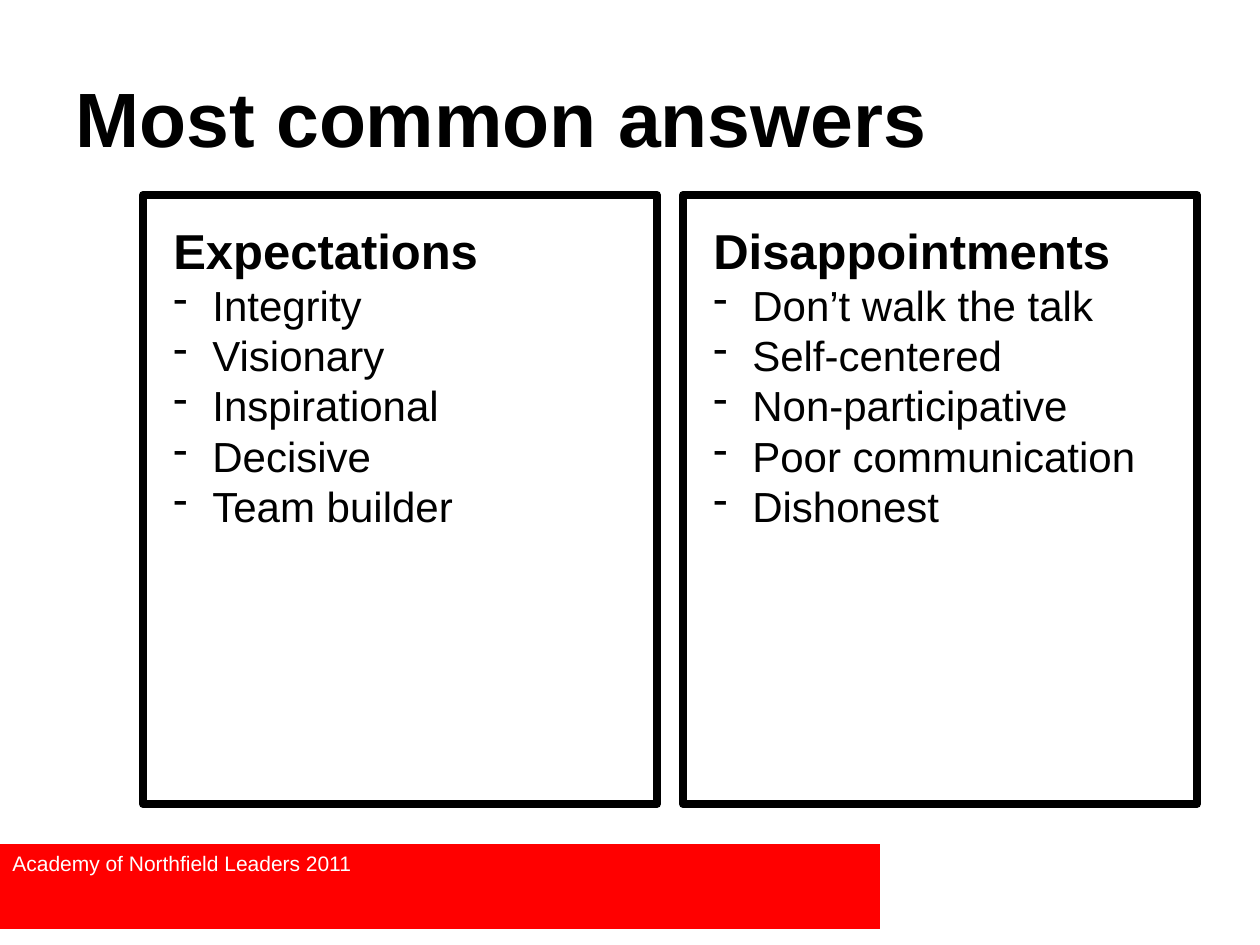
from pptx import Presentation
from pptx.dml.color import RGBColor
from pptx.enum.shapes import MSO_SHAPE as Shape
from pptx.enum.text import MSO_ANCHOR as Anchor
from pptx.oxml.xmlchemy import OxmlElement
from pptx.util import Pt

TITLE = "Most common answers"
FOOTER = "Academy of Northfield Leaders 2011"
PANELS = [
    ("Expectations",
     ["Integrity", "Visionary", "Inspirational", "Decisive", "Team builder"]),
    ("Disappointments",
     ["Don’t walk the talk", "Self-centered", "Non-participative",
      "Poor communication", "Dishonest"]),
]

BLACK, WHITE, RED = "000000", "FFFFFF", "FF0000"
FONT = "Arial"
PANEL_LEFT, PANEL_TOP, PANEL_WIDTH, PANEL_HEIGHT = 143, 195, 514, 609
PANEL_GAP = 26
TEXT_MARGIN = 18
LIST_HEIGHT = 326
BULLET_INDENT = 39


def px(length):
    return round(length * 914400 / 126)


def color(hex_string):
    return RGBColor.from_string(hex_string)


def add_box(left, top, width, height, fill=None, line=None):
    shape = slide.shapes.add_shape(
        Shape.RECTANGLE, px(left), px(top), px(width), px(height))
    shape.shadow.inherit = False
    if fill:
        shape.fill.solid()
        shape.fill.fore_color.rgb = color(fill)
    else:
        shape.fill.background()
    if line:
        shape.line.color.rgb = color(line)
        shape.line.width = Pt(4.5)
    else:
        shape.line.fill.background()


def add_text_frame(left, top, width, height, anchor=Anchor.TOP):
    box = slide.shapes.add_textbox(px(left), px(top), px(width), px(height))
    frame = box.text_frame
    frame.word_wrap = True
    frame.vertical_anchor = anchor
    return frame


def write(paragraph, text, size, bold=False, fill=BLACK, bullet=None):
    run = paragraph.add_run()
    run.text = text
    run.font.name = FONT
    run.font.size = Pt(size)
    run.font.bold = bold
    run.font.color.rgb = color(fill)
    if bullet:
        properties = paragraph._p.get_or_add_pPr()
        properties.set("marL", str(px(BULLET_INDENT)))
        properties.set("indent", str(-px(BULLET_INDENT)))
        mark = OxmlElement("a:buChar")
        mark.set("char", bullet)
        properties.append(mark)


presentation = Presentation()
presentation.slide_width, presentation.slide_height = px(1260), px(945)
slide = presentation.slides.add_slide(presentation.slide_layouts[6])

title = add_text_frame(63, 38, 1134, 157, anchor=Anchor.MIDDLE)
write(title.paragraphs[0], TITLE, size=44, bold=True)

add_box(0, 844, 880, 85, fill=RED)
footer = add_text_frame(0, 844, 852, 38)
write(footer.paragraphs[0], FOOTER, size=12, fill=WHITE)

for column, (heading, answers) in enumerate(PANELS):
    left = PANEL_LEFT + column * (PANEL_WIDTH + PANEL_GAP)
    add_box(left, PANEL_TOP, PANEL_WIDTH, PANEL_HEIGHT, line=BLACK)
    frame = add_text_frame(left + TEXT_MARGIN, PANEL_TOP + TEXT_MARGIN + 1,
                           PANEL_WIDTH - 2 * TEXT_MARGIN, LIST_HEIGHT)
    write(frame.paragraphs[0], heading, size=28, bold=True)
    for answer in answers:
        write(frame.add_paragraph(), answer, size=24, bullet="-")

presentation.save("out.pptx")
